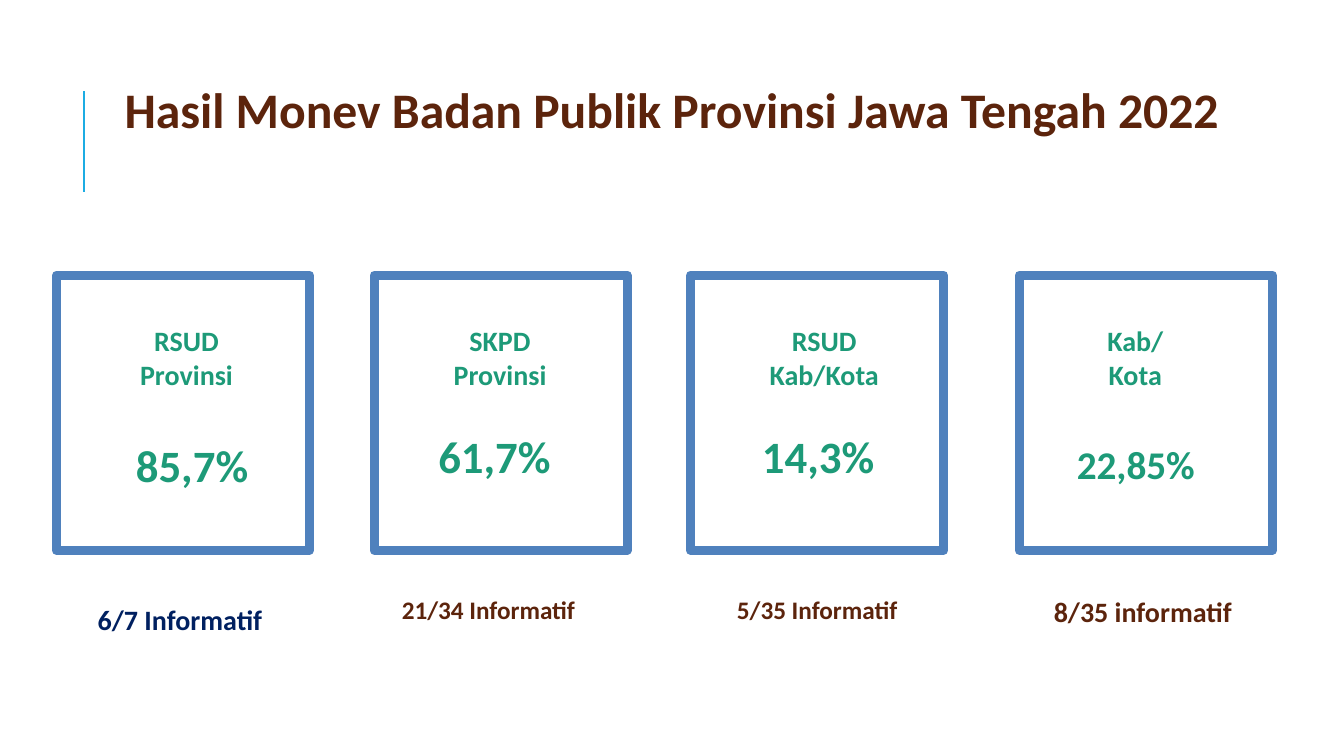
from dataclasses import dataclass

from lxml import etree
from pptx import Presentation
from pptx import util as u
from pptx.dml.color import RGBColor
from pptx.enum import shapes, text
from pptx.oxml.ns import qn

PX = 9144


@dataclass(frozen=True)
class Theme:
    """Hold the colours, type sizes and line widths."""
    font: str = "Calibri"
    brown: str = "5C240C"
    green: str = "1D9A78"
    navy: str = "002060"
    blue: str = "4F81BD"
    cyan: str = "1CACE3"
    title: float = 35.5
    value: int = 32
    label: int = 20
    note: int = 18
    frame: float = 6.5
    rule: float = 1.5


T = Theme()
CARDS = [
    dict(left=56, label=("RSUD Provinsi", 42, 174),
         value=("85,7%", 52, 102, 165, 171, T.value),
         note=("6/7 Informatif", -3, 320, 251, T.label, T.navy)),
    dict(left=371, label=("SKPD Provinsi", 40, 170),
         value=("61,7%", 41, 126, 157, 106, T.value),
         note=("21/34 Informatif", -12, 312, 251, T.note, T.brown)),
    dict(left=685, label=("RSUD Kab/Kota", 39, 187),
         value=("14,3%", 48, 126, 157, 106, T.value),
         note=("5/35 Informatif", 0, 312, 251, T.note, T.brown)),
    dict(left=1011, label=("Kab/Kota", 55, 120),
         value=("22,85%", 43, 112, 145, 151, 28),
         note=("8/35 informatif", 9, 312, 227, T.label, T.brown)),
]


def px(*nums):
    """Turn px lengths into EMU."""
    return [u.Emu(n * PX) for n in nums]


def write(slide, box, words, size, color, mid=False, space=None):
    """Place one line of bold centred text in a box."""
    frame = slide.shapes.add_textbox(*px(*box)).text_frame
    frame.word_wrap = True
    if mid:
        frame.vertical_anchor = text.MSO_ANCHOR.MIDDLE
    para = frame.paragraphs[0]
    para.alignment = text.PP_ALIGN.CENTER
    if space:
        para.line_spacing = space
    run = para.add_run()
    run.text = words
    run.font.name = T.font
    run.font.size = u.Pt(size)
    run.font.bold = True
    run.font.color.rgb = RGBColor.from_string(color)


def stroke(line, color, width):
    """Set the colour and width of a line."""
    line.color.rgb = RGBColor.from_string(color)
    line.width = u.Pt(width)


def head(slide, x, y, w, h):
    """Draw the title and the upright rule at its left."""
    rule = slide.shapes.add_connector(
        shapes.MSO_CONNECTOR.STRAIGHT, *px(x, y + 100, x, y))
    stroke(rule.line, T.cyan, T.rule)
    etree.SubElement(rule._element.spPr, qn("a:effectLst"))
    write(slide, (x + 9, y - 24, w, h), "Hasil Monev Badan Publik Provinsi Jawa Tengah 2022",
          T.title, T.brown, mid=True, space=0.9)


def card(slide, x, y, w, h, label, value, note):
    """Draw a framed score with its label and the note below."""
    box = slide.shapes.add_shape(shapes.MSO_SHAPE.RECTANGLE, *px(x, y, w, h))
    box.shadow.inherit = False
    box.fill.background()
    stroke(box.line, T.blue, T.frame)
    words, dx, wide = label
    write(slide, (x + dx, y + 43, wide, 44), words, T.label, T.green)
    words, dx, dy, wide, high, size = value
    write(slide, (x + dx, y + dy, wide, high), words, size, T.green, mid=True)
    words, dx, dy, wide, size, color = note
    write(slide, (x + dx, y + dy, wide, 44), words, size, color)


def main():
    """Build and save the slide."""
    deck = Presentation()
    deck.slide_width, deck.slide_height = px(1333, 750)
    slide = deck.slides.add_slide(deck.slide_layouts[6])
    head(slide, 83, 90, 1150, 91)
    for item in CARDS:
        card(slide, item["left"], 273, 251, 273,
             item["label"], item["value"], item["note"])
    deck.save("out.pptx")


if __name__ == "__main__":
    main()
